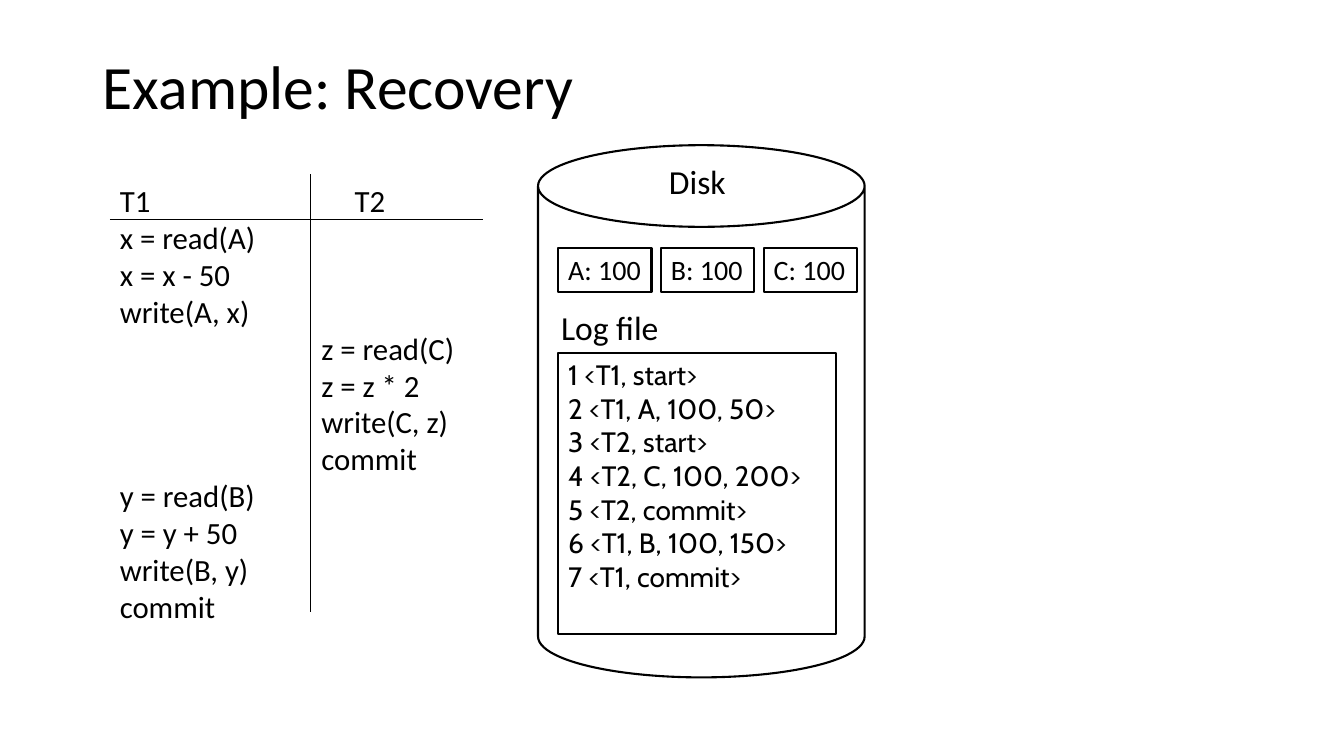
from dataclasses import dataclass

from lxml.etree import SubElement
from pptx import Presentation
from pptx.dml.color import RGBColor
from pptx.enum.shapes import MSO_CONNECTOR, MSO_SHAPE
from pptx.enum.text import MSO_ANCHOR, PP_ALIGN
from pptx.oxml.ns import qn
from pptx.util import Cm, Pt

BLACK = "000000"
HEADER_TAB = 5.92
STEP_TAB = 5.08
SCHEDULE = [
    "T1\tT2",
    "x = read(A)",
    "x = x - 50",
    "write(A, x)",
    "\tz = read(C)",
    "\tz = z * 2",
    "\twrite(C, z)",
    "\tcommit",
    "y = read(B)",
    "y = y + 50",
    "write(B, y)",
    "commit",
]
LOG_RECORDS = [
    "1 <T1, start>",
    "2 <T1, A, 100, 50>",
    "3 <T2, start>",
    "4 <T2, C, 100, 200>",
    "5 <T2, commit>",
    "6 <T1, B, 100, 150>",
    "7 <T1, commit>",
]


@dataclass
class Box:
    """A place on the slide in centimetres, with its lines of text."""

    left: float
    top: float
    width: float
    height: float
    lines: list[str]
    size: float = 20
    font: str = "Calibri"
    wrap: bool = False

    def frame(self) -> tuple:
        """Return the left, top, width and height as lengths."""
        return Cm(self.left), Cm(self.top), Cm(self.width), Cm(self.height)


@dataclass
class Rule:
    """A straight line in centimetres."""

    start_x: float
    start_y: float
    end_x: float
    end_y: float


def colour(value: str) -> RGBColor:
    """Turn a hex string into a colour."""
    return RGBColor.from_string(value)


def write_text(shape, box: Box, anchor=MSO_ANCHOR.TOP) -> None:
    """Write the lines of a box into a shape, one paragraph each."""
    text_frame = shape.text_frame
    text_frame.word_wrap = box.wrap
    text_frame.vertical_anchor = anchor
    text_frame.text = "\n".join(box.lines)
    for paragraph in text_frame.paragraphs:
        paragraph.alignment = PP_ALIGN.LEFT
        paragraph.font.name = box.font
        paragraph.font.size = Pt(box.size)
        paragraph.font.color.rgb = colour(BLACK)


def set_title(slide, box: Box) -> None:
    """Move and format the title placeholder."""
    title = slide.shapes.title
    title.left, title.top, title.width, title.height = box.frame()
    write_text(title, box, MSO_ANCHOR.MIDDLE)
    title.text_frame.paragraphs[0].line_spacing = 0.9


def add_text(slide, box: Box):
    """Add a text box and return it."""
    shape = slide.shapes.add_textbox(*box.frame())
    write_text(shape, box)
    return shape


def add_outline(slide, kind: MSO_SHAPE, box: Box) -> None:
    """Add an unfilled shape with a black outline."""
    shape = slide.shapes.add_shape(kind, *box.frame())
    shape.shadow.inherit = False
    shape.fill.background()
    shape.line.color.rgb = colour(BLACK)
    shape.line.width = Pt(1.5)
    if box.lines:
        write_text(shape, box)


def add_rule(slide, rule: Rule) -> None:
    """Add a thin black line."""
    connector = slide.shapes.add_connector(
        MSO_CONNECTOR.STRAIGHT,
        Cm(rule.start_x), Cm(rule.start_y), Cm(rule.end_x), Cm(rule.end_y),
    )
    connector.line.color.rgb = colour(BLACK)
    connector.line.width = Pt(0.75)
    SubElement(connector._element.spPr, qn("a:effectLst"))


def set_tab(paragraph, position: float) -> None:
    """Give a paragraph one left tab stop."""
    properties = paragraph._p.get_or_add_pPr()
    tab_list = properties.makeelement(qn("a:tabLst"), {})
    SubElement(tab_list, qn("a:tab"), pos=str(Cm(position)), algn="l")
    properties.find(qn("a:defRPr")).addprevious(tab_list)


def add_schedule(slide) -> None:
    """Add the interleaved steps of both transactions with their rules."""
    schedule = add_text(slide, Box(2.77, 4.45, 9.6, 12.1, SCHEDULE, 22, wrap=True))
    for index, paragraph in enumerate(schedule.text_frame.paragraphs):
        set_tab(paragraph, STEP_TAB if index else HEADER_TAB)
    for rule in (Rule(7.82, 4.39, 7.82, 15.42), Rule(2.77, 5.54, 12.17, 5.54)):
        add_rule(slide, rule)


def add_disk(slide) -> None:
    """Add the disk with its stored values and its log file."""
    add_text(slide, Box(16.61, 3.94, 1.96, 1.27, ["Disk"], 24))
    add_outline(slide, MSO_SHAPE.CAN, Box(13.56, 3.66, 8.23, 13.41, []))
    for index, name in enumerate("ABC"):
        value = Box(14.07 + 2.59 * index, 6.25, 2.35, 1.12, [f"{name}: 100"])
        add_outline(slide, MSO_SHAPE.RECTANGLE, value)
    log = Box(14.07, 8.89, 7.01, 7.09, LOG_RECORDS, font="Cabin", wrap=True)
    add_outline(slide, MSO_SHAPE.RECTANGLE, log)
    add_text(slide, Box(13.89, 7.62, 3, 1.27, ["Log file"], 24))


def main() -> None:
    """Build the slide and save it."""
    presentation = Presentation()
    presentation.slide_width = Cm(33.87)
    presentation.slide_height = Cm(19.05)
    slide = presentation.slides.add_slide(presentation.slide_layouts[5])
    set_title(slide, Box(2.34, 1.02, 29.21, 2.46, ["Example: Recovery"], 44, wrap=True))
    add_schedule(slide)
    add_disk(slide)
    presentation.save("out.pptx")


if __name__ == "__main__":
    main()
